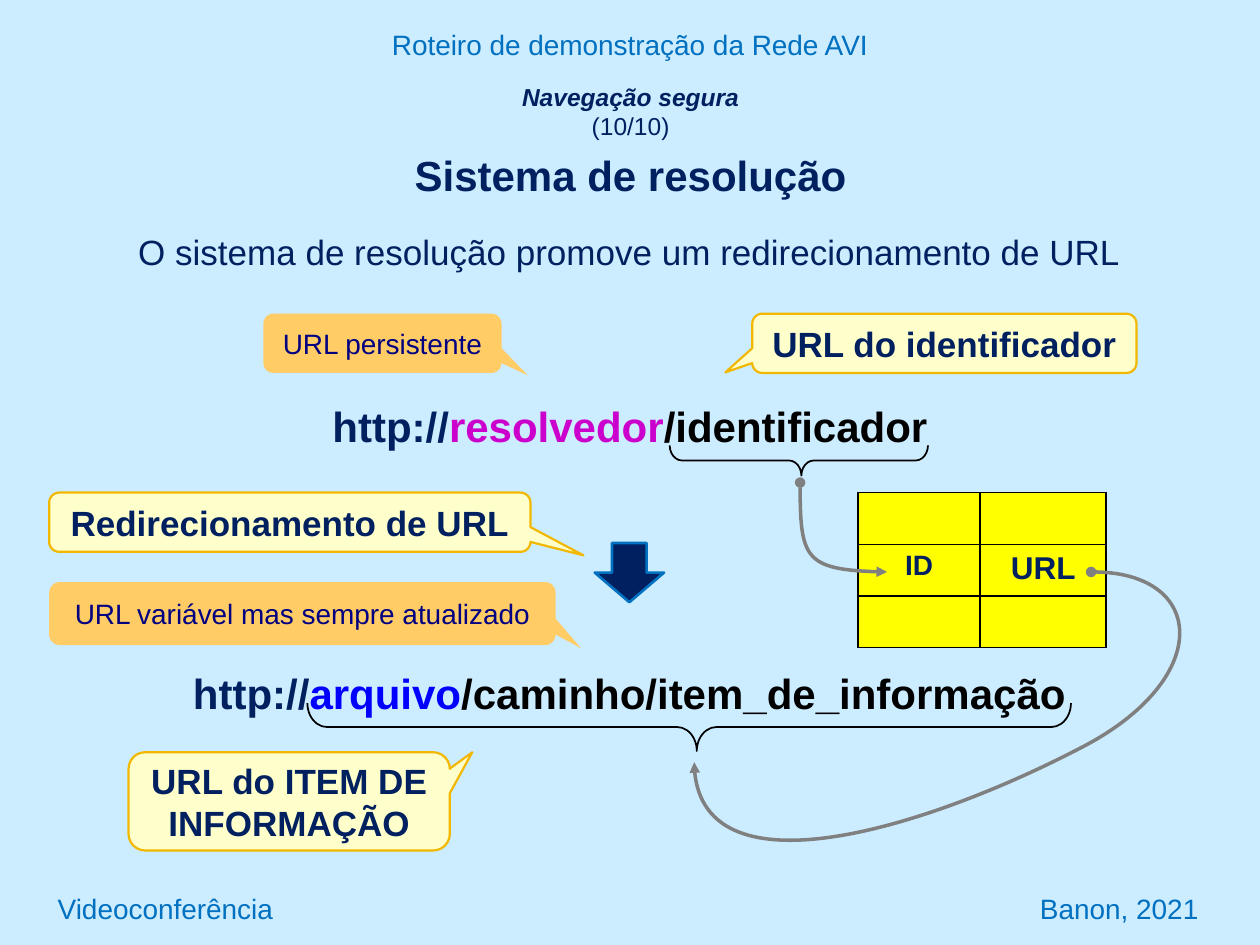
"""Build the slide on URL redirection by a resolution system."""
from lxml.etree import SubElement
from pptx import Presentation
from pptx.dml.color import RGBColor
from pptx.enum.shapes import MSO_SHAPE
from pptx.enum.text import MSO_ANCHOR, MSO_AUTO_SIZE, PP_ALIGN
from pptx.oxml.ns import qn
from pptx.util import Inches, Pt

SKY = RGBColor(0xCC, 0xEC, 0xFF)
BLUE = RGBColor(0x00, 0x70, 0xC0)
NAVY = RGBColor(0x00, 0x20, 0x60)
INDIGO = RGBColor(0x00, 0x00, 0x80)
LINK = RGBColor(0x00, 0x00, 0xFF)
PINK = RGBColor(0xCC, 0x00, 0xCC)
BLACK = RGBColor(0x00, 0x00, 0x00)
GREY = RGBColor(0x80, 0x80, 0x80)
ORANGE = RGBColor(0xFF, 0xCC, 0x66)
CREAM = RGBColor(0xFF, 0xFF, 0xCC)
GOLD = RGBColor(0xF2, 0xB8, 0x00)
YELLOW = RGBColor(0xFF, 0xFF, 0x00)


def style(para, size, color, bold=False, align=PP_ALIGN.CENTER):
    """Format a whole paragraph."""
    font = para.font
    font.name, font.size, font.bold = "Arial", Pt(size), bold
    font.color.rgb = color
    para.alignment = align


def place(shape, *box):
    """Set left, top, width and height in inches."""
    shape.left, shape.top, shape.width, shape.height = map(Inches, box)


def setup(frame, anchor=MSO_ANCHOR.TOP):
    """Make a text frame wrap at a fixed size."""
    frame.word_wrap = True
    frame.auto_size = MSO_AUTO_SIZE.NONE
    frame.vertical_anchor = anchor


def add_text(slide, box, text, size, color, bold=False, align=PP_ALIGN.CENTER):
    """Add a text box with one paragraph and return the paragraph."""
    frame = slide.shapes.add_textbox(*map(Inches, box)).text_frame
    setup(frame)
    para = frame.paragraphs[0]
    para.text = text
    style(para, size, color, bold, align)
    return para


def add_url(slide, box, host, tint, rest):
    """Add a URL whose host and tail have their own colours."""
    para = add_text(slide, box, "http://", 24, NAVY, True)
    for text, color in ((host, tint), (rest, BLACK)):
        run = para.add_run()
        run.text = text
        run.font.color.rgb = color


def add_shape(slide, kind, box, fill=None, line=None, width=1, adjust=()):
    """Add a flat preset shape."""
    shape = slide.shapes.add_shape(kind, *map(Inches, box))
    paint(shape, fill, line, width)
    for i, value in enumerate(adjust):
        shape.adjustments[i] = value
    return shape


def paint(shape, fill, line, width):
    """Set the fill and line and drop the shadow."""
    shape.shadow.inherit = False
    if fill is None:
        shape.fill.background()
    else:
        shape.fill.solid()
        shape.fill.fore_color.rgb = fill
    if line is None:
        shape.line.fill.background()
    else:
        shape.line.color.rgb = line
        shape.line.width = Pt(width)


def add_note(slide, box, tip, text, strong=True):
    """Add a callout, either strong with an outline or plain."""
    fill, line = (CREAM, GOLD) if strong else (ORANGE, None)
    shape = add_shape(slide, MSO_SHAPE.ROUNDED_RECTANGULAR_CALLOUT, box,
                      fill, line, 1.25, (*tip, 0.17))
    setup(shape.text_frame, MSO_ANCHOR.MIDDLE)
    para = shape.text_frame.paragraphs[0]
    para.text = text
    style(para, 20 if strong else 16, NAVY if strong else INDIGO, strong)


def add_brace(slide, box):
    """Add a brace that points down."""
    shape = add_shape(slide, MSO_SHAPE.LEFT_BRACE, box, None, BLACK, 1, (0.41, 0.51))
    shape.rotation = 270


def add_curve(slide, points, width, height):
    """Add a curved arrow from Bezier points, given its visible size."""
    start, *rest = [(Inches(x), Inches(y)) for x, y in points]
    form = slide.shapes.build_freeform(*start)
    form.add_line_segments(rest, close=False)
    shape = form.convert_to_shape()
    paint(shape, None, GREY, 2)
    props = shape._element.spPr
    route = next(props.iter(qn("a:path")))
    lines = route.findall(qn("a:lnTo"))
    for i in range(0, len(lines), 3):
        curve = SubElement(route, qn("a:cubicBezTo"))
        for line in lines[i:i + 3]:
            curve.append(line[0])
            route.remove(line)
    shape.width, shape.height = Inches(width), Inches(height)
    route.set("w", str(shape.width))
    route.set("h", str(shape.height))
    line = props.find(qn("a:ln"))
    SubElement(line, qn("a:headEnd"), type="oval")
    SubElement(line, qn("a:tailEnd"), type="triangle")


def add_border(cell):
    """Draw black lines on all sides of a cell."""
    props = cell._tc.get_or_add_tcPr()
    for i, side in enumerate(("lnL", "lnR", "lnT", "lnB")):
        line = props.makeelement(qn(f"a:{side}"), {"w": str(Pt(1))})
        fill = SubElement(line, qn("a:solidFill"))
        SubElement(fill, qn("a:srgbClr"), val=str(BLACK))
        props.insert(i, line)


def add_grid(slide):
    """Add the table that maps an ID to a URL."""
    table = slide.shapes.add_table(
        3, 2, *map(Inches, (6.81, 3.91, 1.97, 1.23))).table
    table.first_row = table.horz_banding = False
    for col, width in zip(table.columns, (0.97, 1)):
        col.width = Inches(width)
    for row in table.rows:
        row.height = Inches(0.41)
    for cell in table.iter_cells():
        cell.fill.solid()
        cell.fill.fore_color.rgb = YELLOW
        add_border(cell)
    for i, (text, size) in enumerate((("ID", 16), ("URL", 18))):
        para = table.cell(1, i).text_frame.paragraphs[0]
        para.text = text
        style(para, size, NAVY, True)


def add_heads(slide):
    """Fill the title and subtitle placeholders."""
    title, body = slide.placeholders
    place(title, 0.75, 0.6, 8.51, 0.98)
    setup(title.text_frame)
    top = title.text_frame.paragraphs[0]
    run = top.add_run()
    run.text = "Navegação segura"
    run.font.bold = run.font.italic = True
    top.add_line_break()
    top.add_run().text = "(10/10)"
    style(top, 14, NAVY)
    main_line = title.text_frame.add_paragraph()
    main_line.text = "Sistema de resolução"
    main_line.space_before = Pt(5)
    style(main_line, 24, NAVY, True)
    place(body, 0.92, 1.78, 8.15, 0.44)
    setup(body.text_frame)
    para = body.text_frame.paragraphs[0]
    para.text = "O sistema de resolução promove um redirecionamento de URL"
    para.space_before = Pt(0)
    style(para, 20, NAVY)


def main():
    """Build and save the slide."""
    deck = Presentation()
    deck.slide_width, deck.slide_height = Inches(10), Inches(7.5)
    slide = deck.slides.add_slide(deck.slide_layouts[0])
    slide.background.fill.solid()
    slide.background.fill.fore_color.rgb = SKY
    add_text(slide, (0, 0.17, 10, 0.37), "Roteiro de demonstração da Rede AVI", 16, BLUE)
    add_text(slide, (0.36, 7.03, 4, 0.37), "Videoconferência", 16, BLUE, align=PP_ALIGN.LEFT)
    add_text(slide, (5.61, 7.03, 4, 0.37), "Banon, 2021", 16, BLUE, align=PP_ALIGN.RIGHT)
    add_heads(slide)
    add_url(slide, (1.38, 5.25, 7.23, 0.5), "arquivo", LINK, "/caminho/item_de_informação")
    add_url(slide, (2.5, 3.13, 5, 0.5), "resolvedor", PINK, "/identificador")
    add_note(slide, (2.09, 2.49, 1.89, 0.47), (0.61, 0.54), "URL persistente", False)
    add_note(slide, (0.39, 4.62, 4.02, 0.5), (0.55, 0.55),
             "URL variável mas sempre atualizado", False)
    add_shape(slide, MSO_SHAPE.DOWN_ARROW, (4.72, 4.31, 0.55, 0.47), NAVY, BLUE, 1.5)
    add_grid(slide)
    add_curve(slide, ((6.35, 3.83), (6.35, 4.42), (6.39, 4.53), (7.04, 4.54)), 0.69, 0.71)
    add_curve(slide, ((8.66, 4.54), (9.58, 4.53), (9.63, 5.4), (8.57, 5.94),
                      (7.38, 6.56), (5.52, 7.15), (5.51, 6.05)), 3.84, 2.13)
    add_brace(slide, (5.28, 2.74, 0.38, 6.06))
    add_brace(slide, (6.22, 2.63, 0.24, 2.05))
    add_note(slide, (0.39, 3.91, 3.82, 0.47), (0.61, 0.56), "Redirecionamento de URL")
    add_note(slide, (5.97, 2.49, 3.05, 0.47), (-0.57, 0.49), "URL do identificador")
    add_note(slide, (1.02, 5.97, 2.55, 0.78), (0.57, -0.5), "URL do ITEM DE INFORMAÇÃO")
    deck.save("out.pptx")


if __name__ == "__main__":
    main()
